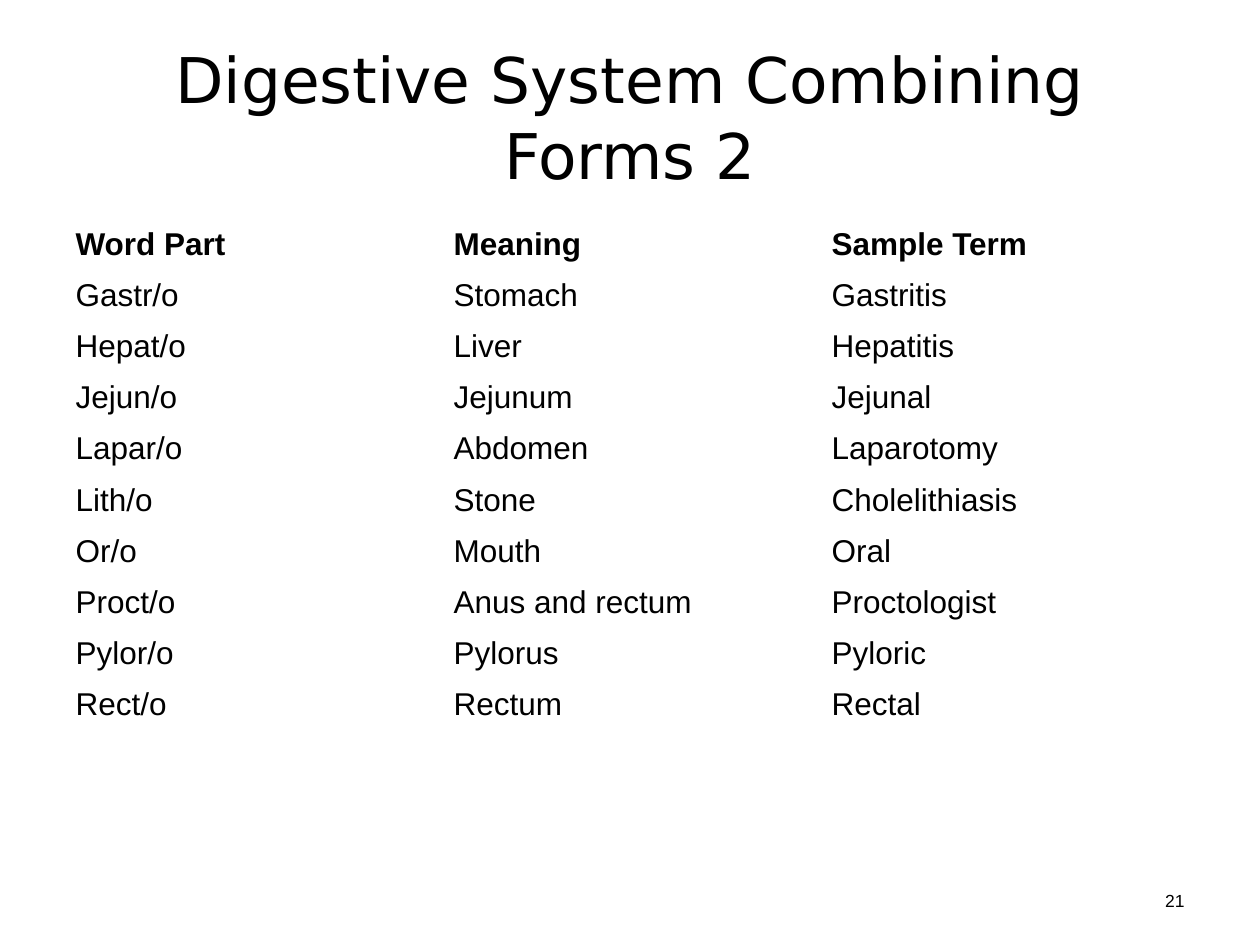
from pptx import Presentation
from pptx.dml.color import RGBColor
from pptx.enum.text import MSO_ANCHOR, PP_ALIGN
from pptx.util import Cm, Pt

COLORS = {"text": "000000"}
ROWS = [
    ("Word Part", "Meaning", "Sample Term"),
    ("Gastr/o", "Stomach", "Gastritis"),
    ("Hepat/o", "Liver", "Hepatitis"),
    ("Jejun/o", "Jejunum", "Jejunal"),
    ("Lapar/o", "Abdomen", "Laparotomy"),
    ("Lith/o", "Stone", "Cholelithiasis"),
    ("Or/o", "Mouth", "Oral"),
    ("Proct/o", "Anus and rectum", "Proctologist"),
    ("Pylor/o", "Pylorus", "Pyloric"),
    ("Rect/o", "Rectum", "Rectal"),
]


def write_text(text_frame, text, font_name, size, alignment, bold=False):
    text_frame.text = text
    paragraph = text_frame.paragraphs[0]
    paragraph.alignment = alignment
    font = paragraph.runs[0].font
    font.name = font_name
    font.size = Pt(size)
    font.bold = bold
    font.color.rgb = RGBColor.from_string(COLORS["text"])


def add_text_box(slide, bounds, text, font_name, size, alignment):
    text_frame = slide.shapes.add_textbox(*map(Cm, bounds)).text_frame
    text_frame.word_wrap = True
    text_frame.vertical_anchor = MSO_ANCHOR.MIDDLE
    write_text(text_frame, text, font_name, size, alignment)


presentation = Presentation()
presentation.slide_width = Cm(25.4)
presentation.slide_height = Cm(19.05)
slide = presentation.slides.add_slide(presentation.slide_layouts[6])

add_text_box(slide, (1.27, 0.76, 22.86, 3.18), "Digestive System Combining Forms 2",
             "DejaVu Sans", 36, PP_ALIGN.CENTER)

table = slide.shapes.add_table(
    len(ROWS), len(ROWS[0]), Cm(1.27), Cm(4.45), Cm(22.86), Cm(11.05)).table
table.first_row = False
table.horz_banding = False
for column in table.columns:
    column.width = Cm(7.62)
for row in table.rows:
    row.height = Cm(1.03)
table.rows[len(ROWS) - 1].height = Cm(1.78)

for row_index, row_texts in enumerate(ROWS):
    for column_index, text in enumerate(row_texts):
        cell = table.cell(row_index, column_index)
        cell.fill.background()
        write_text(cell.text_frame, text, "Arial", 18, PP_ALIGN.LEFT, row_index == 0)

add_text_box(slide, (22.71, 17.4, 1.42, 1.52), "21", "Arial", 10, PP_ALIGN.RIGHT)

presentation.save("out.pptx")
